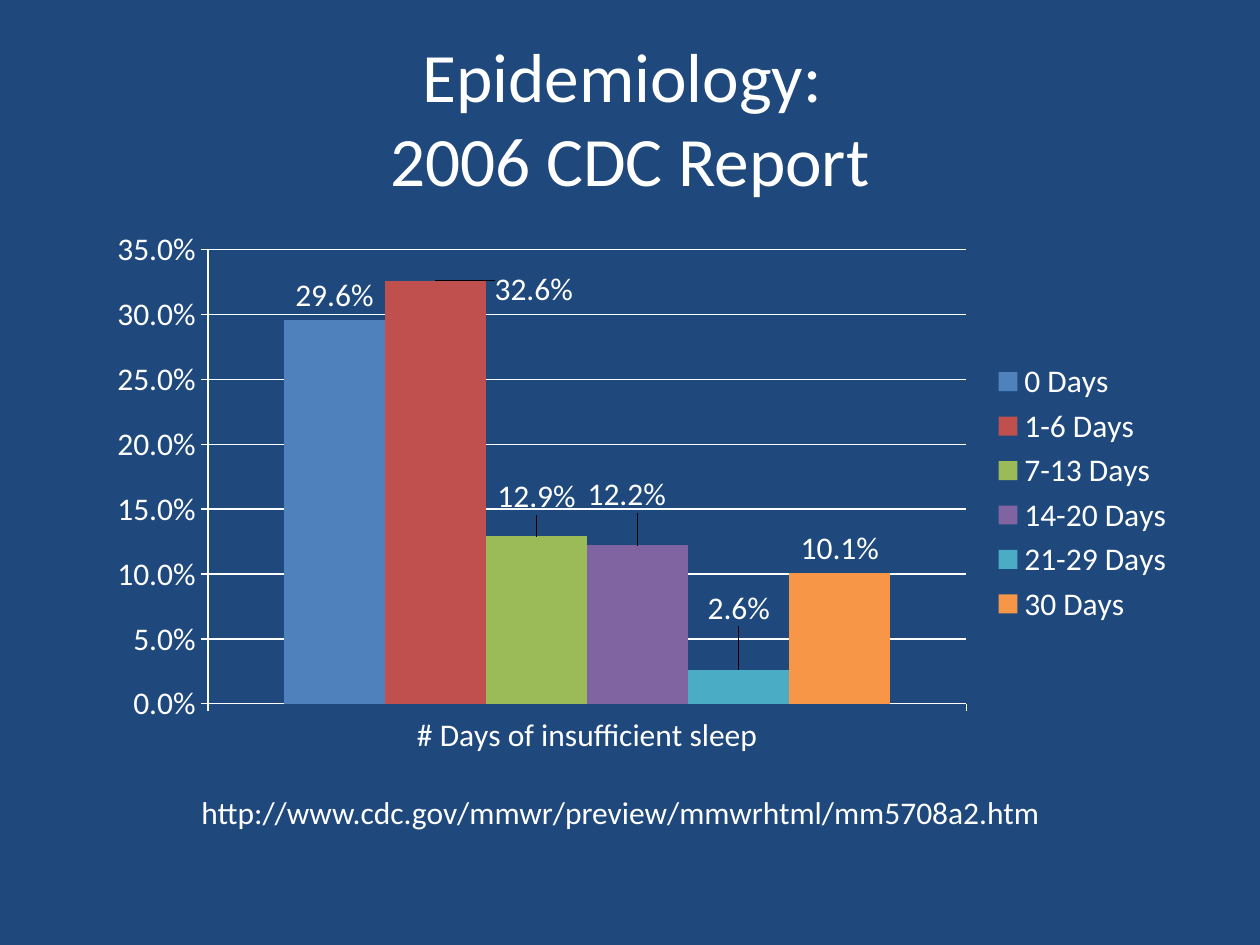
from dataclasses import dataclass

import lxml.etree
import pptx
import pptx.chart.data
import pptx.dml.color
import pptx.enum.chart
import pptx.enum.text
import pptx.oxml.ns
import pptx.util

SLIDE_W, SLIDE_H = 10, 7.5


@dataclass(frozen=True)
class Theme:
    background: str = "1F497D"
    ink: str = "FFFFFF"
    font: str = "Calibri"
    title_size: float = 39.6
    body_size: float = 18
    line_width: float = 0.75


THEME = Theme()
PERCENT = "0.0%"

# Name, share, colour, label shift as a share of the chart (None = default place)
SLEEP_GROUPS = [
    ("0 Days", 0.296, "4F81BD", None),
    ("1-6 Days", 0.326, "C0504D", (0.09, 0.06)),
    ("7-13 Days", 0.129, "9BBB59", (0, -0.03)),
    ("14-20 Days", 0.122, "8064A2", (-0.01, -0.05)),
    ("21-29 Days", 0.026, "4BACC6", (0, -0.07)),
    ("30 Days", 0.101, "F79646", None),
]


def rgb(value):
    return pptx.dml.color.RGBColor.from_string(value)


def box(left, top, width, height):
    """Turn shares of the slide into lengths."""
    return [pptx.util.Inches(share * side) for share, side in
            zip((left, top, width, height), (SLIDE_W, SLIDE_H) * 2)]


def style_font(font, size):
    font.name = THEME.font
    font.size = pptx.util.Pt(size)
    font.color.rgb = rgb(THEME.ink)


def style_line(line):
    line.color.rgb = rgb(THEME.ink)
    line.width = pptx.util.Pt(THEME.line_width)


def add_text(slide, area, text, size, align, anchor):
    frame = slide.shapes.add_textbox(*box(*area)).text_frame
    frame.word_wrap = True
    frame.vertical_anchor = anchor
    paragraph = frame.paragraphs[0]
    paragraph.text = text
    paragraph.alignment = align
    style_font(paragraph.font, size)


def manual_layout(**settings):
    """Build a chart layout element, which python-pptx does not offer."""
    qn = pptx.oxml.ns.qn
    layout = lxml.etree.Element(qn("c:layout"))
    manual = lxml.etree.SubElement(layout, qn("c:manualLayout"))
    for tag, value in settings.items():
        lxml.etree.SubElement(manual, qn(f"c:{tag}")).set("val", str(value))
    return layout


def style_series(series, color, label_shift):
    series.format.fill.solid()
    series.format.fill.fore_color.rgb = rgb(color)
    outside = pptx.enum.chart.XL_LABEL_POSITION.OUTSIDE_END
    labels = series.data_labels
    labels.show_value = True
    labels.number_format = PERCENT
    labels.number_format_is_linked = False
    labels.position = outside
    style_font(labels.font, THEME.body_size)
    if label_shift:
        series.points[0].data_label.position = outside
        shift_x, shift_y = label_shift
        index = series.data_labels._element.find(
            "/".join(map(pptx.oxml.ns.qn, ("c:dLbl", "c:idx"))))
        index.addnext(manual_layout(x=shift_x, y=shift_y))


def add_sleep_chart(slide, area):
    data = pptx.chart.data.CategoryChartData(number_format=PERCENT)
    data.categories = ["# Days of insufficient sleep"]
    for name, share, _, _ in SLEEP_GROUPS:
        data.add_series(name, [share])
    chart = slide.shapes.add_chart(
        pptx.enum.chart.XL_CHART_TYPE.COLUMN_CLUSTERED, *box(*area), data).chart
    chart.has_title = False
    style_font(chart.font, THEME.body_size)

    # Bars and their labels
    plot = chart.plots[0]
    plot.gap_width = 150
    plot.overlap = 0
    plot.vary_by_categories = False
    for series, (_, _, color, label_shift) in zip(plot.series, SLEEP_GROUPS):
        style_series(series, color, label_shift)

    # Axes
    for axis in (chart.category_axis, chart.value_axis):
        axis.major_tick_mark = pptx.enum.chart.XL_TICK_MARK.OUTSIDE
        style_line(axis.format.line)
    shares = chart.value_axis
    shares.minimum_scale, shares.maximum_scale, shares.major_unit = 0, 0.35, 0.05
    shares.tick_labels.number_format = PERCENT
    shares.tick_labels.number_format_is_linked = False
    shares.has_major_gridlines = True
    style_line(shares.major_gridlines.format.line)

    # Legend and plot area
    chart.has_legend = True
    chart.legend.position = pptx.enum.chart.XL_LEGEND_POSITION.RIGHT
    chart.legend.include_in_layout = False
    plot_area = chart._chartSpace.chart.plotArea
    for old_layout in plot_area.findall(pptx.oxml.ns.qn("c:layout")):
        plot_area.remove(old_layout)
    plot_area.insert(0, manual_layout(
        layoutTarget="inner", xMode="edge", yMode="edge",
        x=0.104, y=0.054, w=0.694, h=0.833))


def main():
    presentation = pptx.Presentation()
    presentation.slide_width = pptx.util.Inches(SLIDE_W)
    presentation.slide_height = pptx.util.Inches(SLIDE_H)
    slide = presentation.slides.add_slide(presentation.slide_layouts[6])
    slide.background.fill.solid()
    slide.background.fill.fore_color.rgb = rgb(THEME.background)

    align, anchor = pptx.enum.text.PP_ALIGN, pptx.enum.text.MSO_ANCHOR
    # Title
    add_text(slide, (0.05, 0.04, 0.9, 0.167), "Epidemiology: \v2006 CDC Report",
             THEME.title_size, align.CENTER, anchor.MIDDLE)
    # Days of insufficient sleep
    add_sleep_chart(slide, (0.075, 0.233, 0.867, 0.577))
    # Source address
    add_text(slide, (0.15, 0.833, 0.808, 0.053),
             "http://www.cdc.gov/mmwr/preview/mmwrhtml/mm5708a2.htm",
             THEME.body_size, align.LEFT, anchor.TOP)

    presentation.save("out.pptx")


if __name__ == "__main__":
    main()
